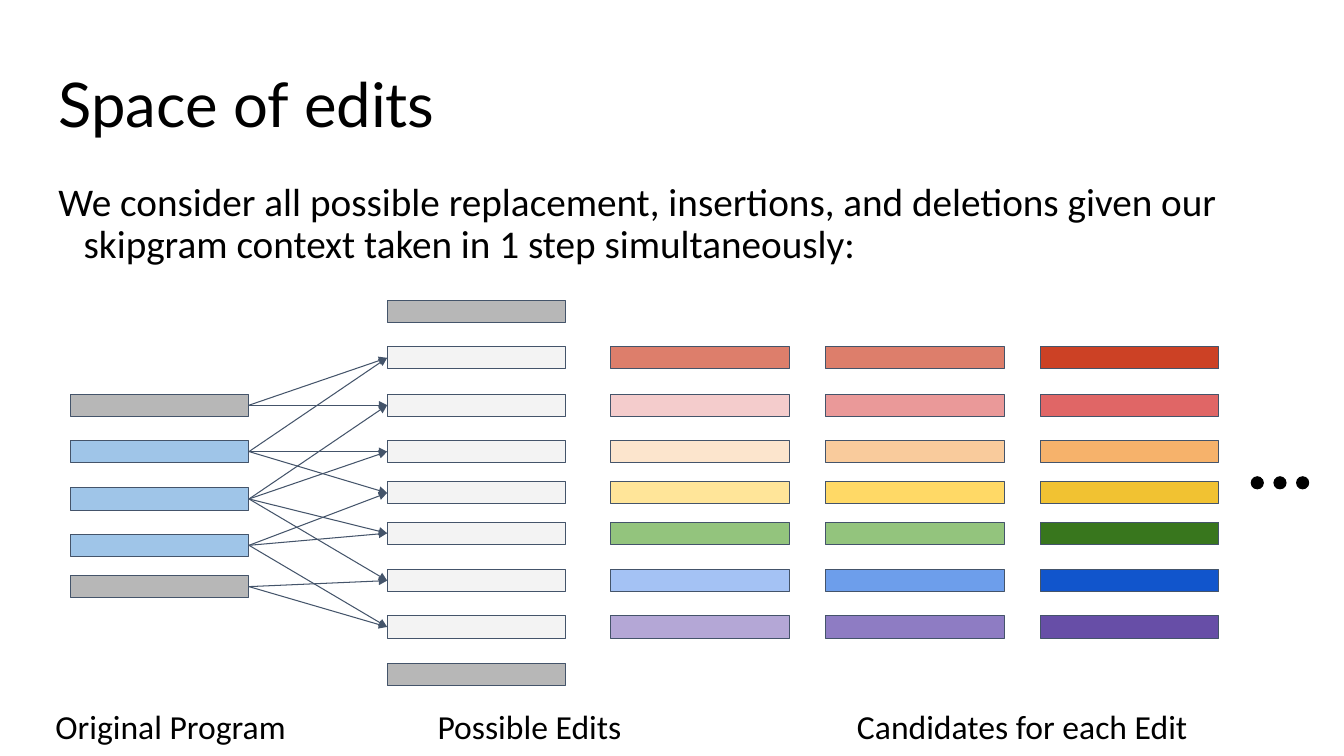
from pptx import Presentation
from pptx.dml.color import RGBColor
from pptx.enum import shapes, text
from pptx.oxml.ns import qn
from pptx.util import Inches, Pt
from lxml import etree

BLACK = RGBColor(0x00, 0x00, 0x00)
OUTLINE = RGBColor(0x44, 0x54, 0x6A)
CONTEXT = RGBColor(0xB7, 0xB7, 0xB7)
STATEMENT = RGBColor(0x9F, 0xC5, 0xE8)
EDIT = RGBColor(0xF3, 0xF3, 0xF3)
# One row per possible edit, one colour per candidate
CANDIDATES = [[RGBColor.from_string(code) for code in row.split()] for row in (
    "DD7E6B DD7E6B CC4125",
    "F4CCCC EA9999 E06666",
    "FCE5CD F9CB9C F6B26B",
    "FFE599 FFD966 F1C232",
    "93C47D 93C47D 38761D",
    "A4C2F4 6D9EEB 1155CC",
    "B4A7D6 8E7CC3 674EA7",
)]

BAR_WIDTH, BAR_HEIGHT = 1.77, 0.22
# Row offsets shared by all columns; rows around the centre sit closer together
ROW_OFFSETS = [0, 0.46, 0.93, 1.39, 1.8, 2.2, 2.67, 3.13, 3.6]
# (program line, possible edit) pairs joined by arrows
EDIT_LINKS = [(0, 1), (1, 1), (0, 2), (2, 2), (1, 3), (2, 3), (1, 4),
              (3, 4), (2, 5), (3, 5), (2, 6), (4, 6), (3, 7), (4, 7)]
RIGHT_SITE, LEFT_SITE = 3, 1


def write_text(frame, words, size, font="Calibri", spacing=1.0, hanging=0,
               anchor=text.MSO_ANCHOR.TOP):
    frame.word_wrap = True
    frame.auto_size = text.MSO_AUTO_SIZE.NONE
    frame.vertical_anchor = anchor
    frame.margin_left = frame.margin_right = Inches(0.13)
    frame.margin_top = frame.margin_bottom = Inches(0.13)
    paragraph = frame.paragraphs[0]
    paragraph.alignment = text.PP_ALIGN.LEFT
    paragraph.line_spacing = spacing
    if hanging:
        properties = paragraph._p.get_or_add_pPr()
        properties.set("marL", str(Inches(hanging)))
        properties.set("indent", str(-Inches(hanging)))
    run = paragraph.add_run()
    run.text = words
    run.font.size = Pt(size)
    run.font.name = font
    run.font.color.rgb = BLACK


def add_text(slide, box, words, size, **style):
    textbox = slide.shapes.add_textbox(*map(Inches, box))
    write_text(textbox.text_frame, words, size, **style)


def add_filled(slide, kind, box, fill, outline):
    filled = slide.shapes.add_shape(kind, *map(Inches, box))
    filled.shadow.inherit = False
    filled.fill.solid()
    filled.fill.fore_color.rgb = fill
    filled.line.color.rgb = outline
    filled.line.width = Pt(0.75)
    return filled


def add_column(slide, left, top, colours, offsets=ROW_OFFSETS):
    return [add_filled(slide, shapes.MSO_SHAPE.RECTANGLE,
                       (left, top + offset, BAR_WIDTH, BAR_HEIGHT), colour, OUTLINE)
            for offset, colour in zip(offsets, colours)]


def add_arrow(slide, source, target):
    arrow = slide.shapes.add_connector(shapes.MSO_CONNECTOR.STRAIGHT, 0, 0, 0, 0)
    arrow.begin_connect(source, RIGHT_SITE)
    arrow.end_connect(target, LEFT_SITE)
    arrow.line.color.rgb = OUTLINE
    arrow.line.width = Pt(0.75)
    etree.SubElement(arrow.line._get_or_add_ln(), qn("a:tailEnd"), type="triangle")
    etree.SubElement(arrow._element.spPr, qn("a:effectLst"))


def add_heading(slide, left, top, width):
    title = slide.shapes.title
    title.left, title.top = Inches(left), Inches(top)
    title.width, title.height = Inches(width), Inches(0.84)
    write_text(title.text_frame, "Space of edits", 44, font="Lato", spacing=0.9,
               anchor=text.MSO_ANCHOR.MIDDLE)
    add_text(slide, (left, top + 1.03, width, 0.73),
             "We consider all possible replacement, insertions, and deletions "
             "given our skipgram context taken in 1 step simultaneously:",
             28, spacing=0.9, hanging=0.25)


def add_edit_graph(slide, left, top):
    program = add_column(slide, left, top + 0.93,
                         [CONTEXT] + [STATEMENT] * 3 + [CONTEXT])
    edits = add_column(slide, left + 3.14, top,
                       [CONTEXT] + [EDIT] * 7 + [CONTEXT])
    for line, edit in EDIT_LINKS:
        add_arrow(slide, program[line], edits[edit])


def add_candidates(slide, left, top):
    for index, colours in enumerate(zip(*CANDIDATES)):
        add_column(slide, left + index * 2.13, top, colours, ROW_OFFSETS[1:])
    # Ellipsis: more candidates follow
    for index in range(3):
        add_filled(slide, shapes.MSO_SHAPE.OVAL,
                   (left + 6.35 + index * 0.225, top + 1.75, 0.12, 0.12),
                   BLACK, BLACK)


def add_captions(slide, top):
    for left, width, caption in ((0.42, 2.8, "Original Program"),
                                 (4.21, 2.4, "Possible Edits"),
                                 (8.37, 3.8, "Candidates for each Edit")):
        add_text(slide, (left, top, width, 0.29), caption, 24)


def main():
    deck = Presentation()
    deck.slide_width, deck.slide_height = Inches(13.33), Inches(7.5)
    slide = deck.slides.add_slide(deck.slide_layouts[5])
    add_heading(slide, 0.45, 0.65, 12.42)
    add_edit_graph(slide, 0.7, 2.98)
    add_candidates(slide, 6.06, 2.98)
    add_captions(slide, 6.87)
    deck.save("out.pptx")


if __name__ == "__main__":
    main()
